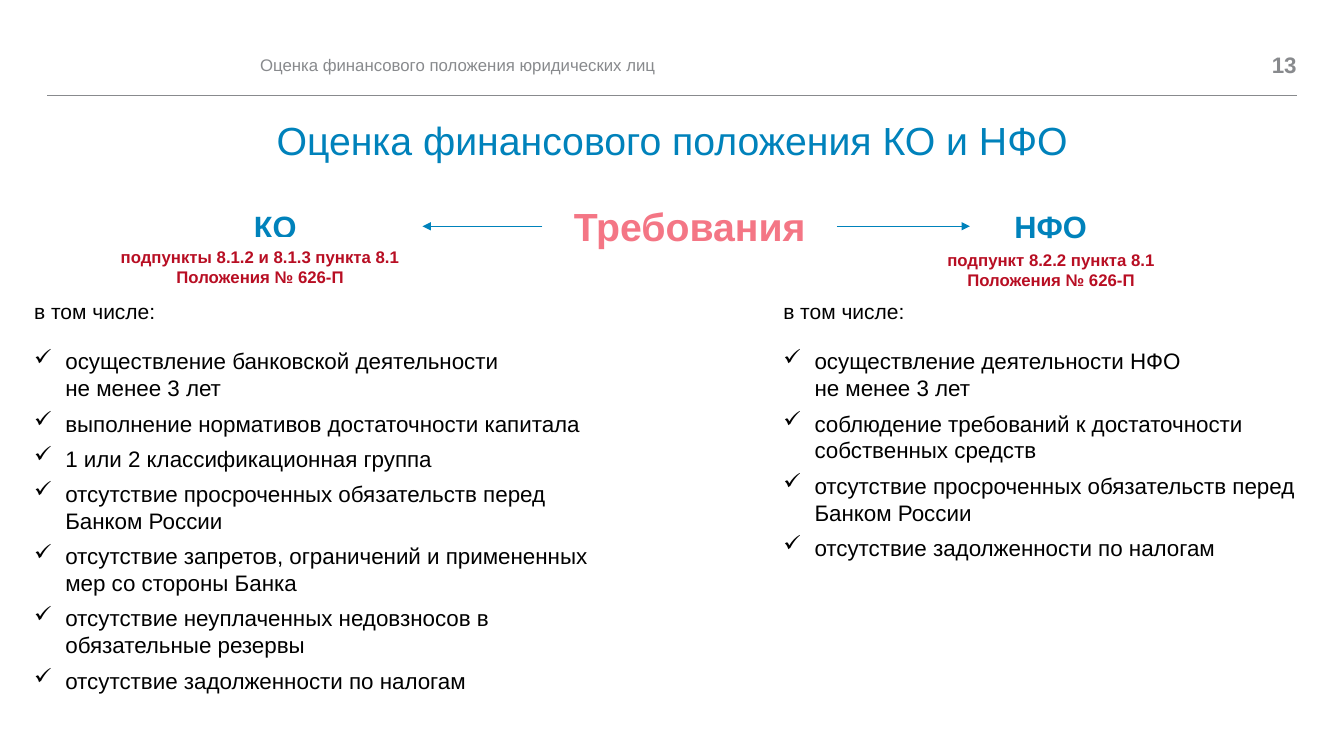
"""Build a slide that compares the requirements for two kinds of institutions."""
import lxml.etree
import pptx
import pptx.dml.color
import pptx.enum.shapes
import pptx.enum.text
import pptx.oxml.ns
import pptx.util

Inches = pptx.util.Inches
Pt = pptx.util.Pt
RGBColor = pptx.dml.color.RGBColor
ALIGN = pptx.enum.text.PP_ALIGN
ANCHOR = pptx.enum.text.MSO_ANCHOR

BLUE = RGBColor(0x00, 0x82, 0xBB)
GRAY = RGBColor(0x88, 0x8A, 0x8D)
PINK = RGBColor(0xF4, 0x76, 0x85)
RED = RGBColor(0xB8, 0x0E, 0x23)
BLACK = RGBColor(0, 0, 0)
WHITE = RGBColor(0xFF, 0xFF, 0xFF)

MARGIN, CONTENT_WIDTH = 0.47, 12.39
BADGE_TOP, BADGE_WIDTH, BADGE_HEIGHT = 1.96, 2.92, 0.57
INDENT = Inches(0.31)

BANK_ITEMS = [
    "осуществление банковской деятельности\vне менее 3 лет",
    "выполнение нормативов достаточности капитала",
    "1 или 2 классификационная группа",
    "отсутствие просроченных обязательств перед Банком России",
    "отсутствие запретов, ограничений и примененных мер со стороны Банка",
    "отсутствие неуплаченных недовзносов в обязательные резервы",
    "отсутствие задолженности по налогам",
]
NONBANK_ITEMS = [
    "осуществление деятельности НФО\vне менее 3 лет",
    "соблюдение требований к достаточности собственных средств",
    "отсутствие просроченных обязательств перед Банком России",
    "отсутствие задолженности по налогам",
]


def add_element(parent, tag, **attributes):
    """Append an XML element with the given attributes."""
    lxml.etree.SubElement(parent, pptx.oxml.ns.qn(tag), attributes)


def set_font(para, size, color, bold=False):
    """Set the font of a whole paragraph."""
    para.font.name = "Arial"
    para.font.size = Pt(size)
    para.font.bold = bold
    para.font.color.rgb = color


def add_label(slide, box, text, size, color, align, anchor=ANCHOR.MIDDLE, bold=False):
    """Place one line of text without insets and return its paragraph."""
    frame = slide.shapes.add_textbox(*map(Inches, box)).text_frame
    frame.word_wrap = True
    frame.vertical_anchor = anchor
    frame.margin_left = frame.margin_right = frame.margin_top = frame.margin_bottom = 0
    para = frame.paragraphs[0]
    para.text = text
    para.alignment = align
    set_font(para, size, color, bold)
    return para


def add_badge(slide, box, text, size, color):
    """Place a white rounded box with bold centred text."""
    rounded = pptx.enum.shapes.MSO_SHAPE.ROUNDED_RECTANGLE
    badge = slide.shapes.add_shape(rounded, *map(Inches, box))
    badge.shadow.inherit = False
    badge.fill.solid()
    badge.fill.fore_color.rgb = WHITE
    badge.line.color.rgb = WHITE
    badge.line.width = Pt(1)
    badge.text_frame.word_wrap = True
    badge.text_frame.vertical_anchor = ANCHOR.MIDDLE
    para = badge.text_frame.paragraphs[0]
    para.text = text
    para.alignment = ALIGN.CENTER
    set_font(para, size, color, True)


def add_rule(slide, start, end, color, width, arrow=False):
    """Draw a straight line, with an arrowhead at its end if asked."""
    straight = pptx.enum.shapes.MSO_CONNECTOR.STRAIGHT
    rule = slide.shapes.add_connector(straight, *map(Inches, (*start, *end)))
    rule.line.color.rgb = color
    rule.line.width = Pt(width)
    properties = rule.element.find(pptx.oxml.ns.qn("p:spPr"))
    if arrow:
        add_element(properties.find(pptx.oxml.ns.qn("a:ln")), "a:tailEnd", type="triangle")
    add_element(properties, "a:effectLst")


def add_header(slide, left, top, width):
    """Place the running header, the page number, the rule and the title."""
    right = left + width
    add_rule(slide, (left, top + 0.48), (right, top + 0.48), GRAY, 0.5)
    title = add_label(slide, (left, top + 0.74, width, 0.46),
                      "Оценка финансового положения КО и НФО",
                      28, BLUE, ALIGN.CENTER, ANCHOR.TOP)
    title.line_spacing = 0.9
    add_label(slide, (left + 2.11, top, 9.23, 0.35),
              "Оценка финансового положения юридических лиц", 12, GRAY, ALIGN.LEFT)
    add_label(slide, (right - 0.81, top, 0.81, 0.35), "13", 16, GRAY, ALIGN.RIGHT, bold=True)


def add_branches(slide, top, bank_left, center_left, nonbank_left):
    """Place the central heading with arrows to the two branch names."""
    for left, text, size, color in ((bank_left, "КО", 22, BLUE),
                                    (nonbank_left, "НФО", 22, BLUE),
                                    (center_left, "Требования", 28, PINK)):
        add_badge(slide, (left, top, BADGE_WIDTH, BADGE_HEIGHT), text, size, color)
    middle = top + BADGE_HEIGHT / 2
    center_right = center_left + BADGE_WIDTH
    add_rule(slide, (center_right, middle), (9.62, middle), BLUE, 1, True)
    add_rule(slide, (center_left, middle), (bank_left + BADGE_WIDTH, middle), BLUE, 1, True)


def add_requirements(slide, box, items):
    """Place an introductory line and a list with check marks."""
    frame = slide.shapes.add_textbox(*map(Inches, box)).text_frame
    frame.word_wrap = True
    intro = frame.paragraphs[0]
    intro.text = "в том числе:"
    intro.space_after = Pt(17.25)
    set_font(intro, 15, BLACK)
    for item in items:
        para = frame.add_paragraph()
        para.text = item
        para.space_after = Pt(6)
        properties = para._p.get_or_add_pPr()
        properties.set("marL", str(INDENT))
        properties.set("indent", str(-INDENT))
        add_element(properties, "a:buChar", char="✓")
        set_font(para, 16, BLACK)


def main():
    """Build the slide and save the deck."""
    deck = pptx.Presentation()
    deck.slide_width, deck.slide_height = Inches(13.33), Inches(7.5)
    slide = deck.slides.add_slide(deck.slide_layouts[6])
    add_header(slide, MARGIN, 0.47, CONTENT_WIDTH)
    add_branches(slide, BADGE_TOP, 1.27, 5.38, 8.96)
    add_requirements(slide, (0.24, 2.91, 5.83, 4.63), BANK_ITEMS)
    add_badge(slide, (0.67, 2.36, 3.82, BADGE_HEIGHT),
              "подпункты 8.1.2 и 8.1.3 пункта 8.1 Положения № 626-П", 12, RED)
    add_badge(slide, (8.35, 2.39, 4.15, BADGE_HEIGHT),
              "подпункт 8.2.2 пункта 8.1\vПоложения № 626-П", 12, RED)
    add_requirements(slide, (7.67, 2.91, 5.38, 3.33), NONBANK_ITEMS)
    deck.save("out.pptx")


if __name__ == "__main__":
    main()
